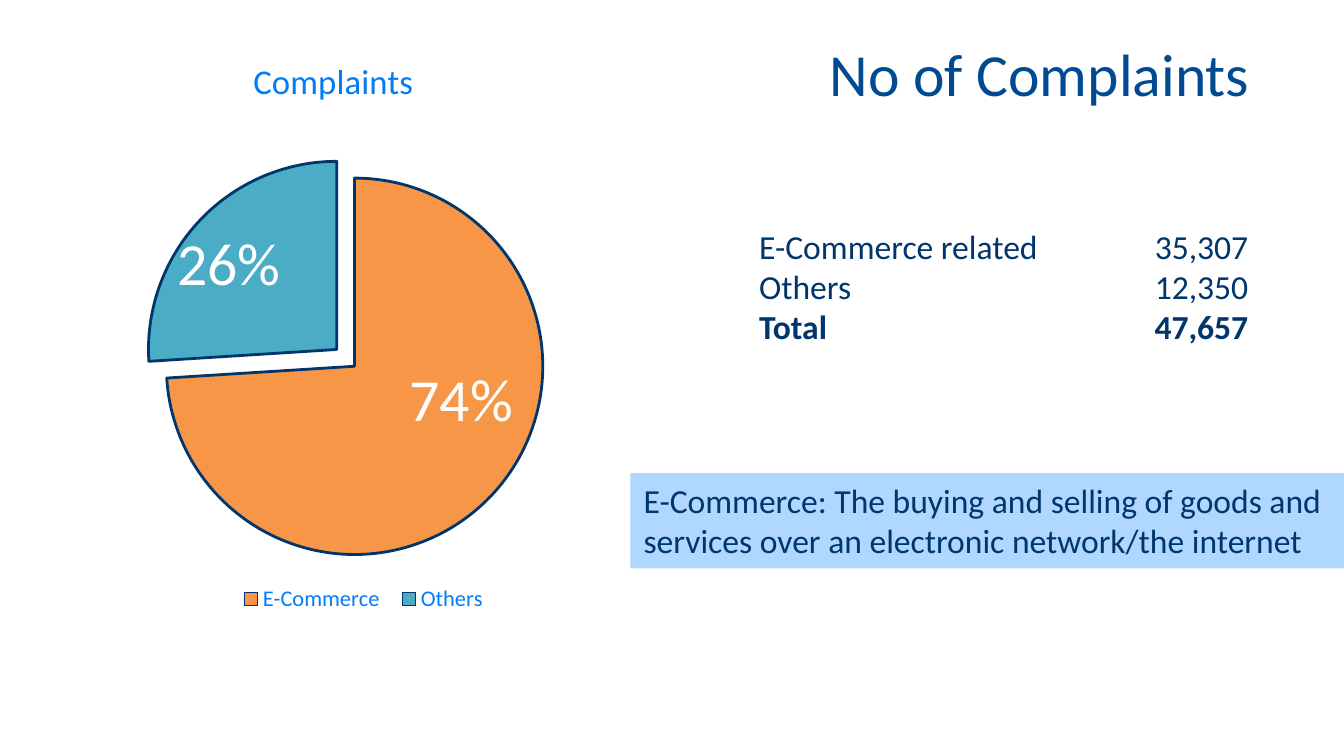
from typing import NamedTuple

from lxml.etree import _Element
from pptx import Presentation
from pptx.chart.chart import Chart
from pptx.chart.data import CategoryChartData
from pptx.dml.color import RGBColor
from pptx.enum.chart import XL_CHART_TYPE, XL_LEGEND_POSITION
from pptx.enum.shapes import MSO_SHAPE
from pptx.enum.text import MSO_ANCHOR, PP_ALIGN
from pptx.oxml import parse_xml
from pptx.oxml.ns import nsdecls, qn
from pptx.shapes.base import BaseShape
from pptx.slide import Slide
from pptx.text.text import Font, TextFrame, _Paragraph
from pptx.util import Inches, Length, Pt

FONT = "Calibri"
NAVY = RGBColor(0x00, 0x36, 0x6C)
TITLE_BLUE = RGBColor(0x00, 0x4A, 0x92)
BRIGHT_BLUE = RGBColor(0x00, 0x7C, 0xF9)
PALE_BLUE = RGBColor(0xAF, 0xD7, 0xFF)
WHITE = RGBColor(0xFF, 0xFF, 0xFF)
ORANGE = RGBColor(0xF7, 0x96, 0x46)
TEAL = RGBColor(0x4B, 0xAC, 0xC6)

CELL = Inches(0.1)  # side of one grid cell
COLUMNS, ROWS = 100, 56.25


class Area(NamedTuple):
    """A rectangle in grid columns and rows."""
    column: float
    row: float
    columns: float
    rows: float

    def lengths(self) -> list[Length]:
        return [Length(round(CELL * cells)) for cells in self]


class Slice(NamedTuple):
    name: str
    percent: int
    color: RGBColor
    explosion: int
    label: Area


class Count(NamedTuple):
    name: str
    complaints: str
    bold: bool = False


SLICES = [
    Slice("E-Commerce", 74, ORANGE, 0, Area(29.5, 26.4, 12.6, 6.4)),
    Slice("Others", 26, TEAL, 13, Area(12.2, 16.3, 12.6, 6.4)),
]
COUNTS = [
    Count("E-Commerce related", "35,307"),
    Count("Others", "12,350"),
    Count("Total", "47,657", bold=True),
]
DEFINITION = ("E-Commerce: The buying and selling of goods and services "
              "over an electronic network/the internet")


def style_font(font: Font, size: float, color: RGBColor, bold: bool = False) -> None:
    font.name = FONT
    font.size = Pt(size)
    font.bold = bold
    font.color.rgb = color


def add_span(para: _Paragraph, text: str, size: float, color: RGBColor,
             bold: bool = False) -> None:
    span = para.add_run()
    span.text = text
    style_font(span.font, size, color, bold)


def place(shape: BaseShape, area: Area) -> None:
    shape.left, shape.top, shape.width, shape.height = area.lengths()


def add_box(page: Slide, area: Area) -> TextFrame:
    frame = page.shapes.add_textbox(*area.lengths()).text_frame
    frame.word_wrap = True
    return frame


def set_layout(parent: _Element, index: int, **shares: float) -> None:
    """Place a chart part by shares of the chart's size."""
    for old in parent.findall(qn("c:layout")):
        parent.remove(old)
    modes = "".join(f'<c:{axis}Mode val="edge"/>' for axis in "xy")
    values = "".join(f'<c:{name} val="{share}"/>' for name, share in shares.items())
    target = '<c:layoutTarget val="inner"/>' if index == 0 else ""
    parent.insert(index, parse_xml(
        f'<c:layout {nsdecls("c")}><c:manualLayout>{target}{modes}{values}'
        "</c:manualLayout></c:layout>"))


def format_slices(chart: Chart) -> None:
    series = chart.plots[0].series[0]
    for index, piece in enumerate(SLICES):
        look = series.points[index].format
        look.fill.solid()
        look.fill.fore_color.rgb = piece.color
        look.line.color.rgb = NAVY
        look.line.width = Pt(1.5)
    for point, piece in zip(series._element.findall(qn("c:dPt")), SLICES):
        point.find(qn("c:spPr")).addprevious(parse_xml(
            f'<c:explosion {nsdecls("c")} val="{piece.explosion}"/>'))


def add_pie(page: Slide, area: Area) -> None:
    data = CategoryChartData()
    data.categories = [piece.name for piece in SLICES]
    data.add_series("Complaints", [piece.percent for piece in SLICES])
    chart = page.shapes.add_chart(XL_CHART_TYPE.PIE, *area.lengths(), data).chart
    style_font(chart.font, 10, NAVY)
    chart.plots[0].vary_by_categories = True
    format_slices(chart)

    heading = chart.chart_title
    add_span(heading.text_frame.paragraphs[0], "Complaints", 18.6, BRIGHT_BLUE)
    heading.include_in_layout = False
    chart.has_legend = True
    legend = chart.legend
    legend.position = XL_LEGEND_POSITION.BOTTOM
    legend.include_in_layout = False
    style_font(legend.font, 12, BRIGHT_BLUE)

    set_layout(heading._element, 1, x=0.4, y=0.03)
    set_layout(legend._element, 1, x=0.38, y=0.92, w=0.3, h=0.06)
    plot_area = chart._chartSpace.find(f".//{qn('c:plotArea')}")
    set_layout(plot_area, 0, x=0.31, y=0.24, w=0.42, h=0.64)


def add_title(page: Slide, area: Area) -> None:
    title = page.shapes.title
    place(title, area)
    frame = title.text_frame
    frame.margin_right = 2 * CELL
    frame.vertical_anchor = MSO_ANCHOR.MIDDLE
    para = frame.paragraphs[0]
    para.alignment = PP_ALIGN.RIGHT
    add_span(para, "No of Complaints", 32, TITLE_BLUE)


def add_counts(page: Slide, area: Area) -> None:
    frame = add_box(page, area)
    tab = round(CELL * (area.columns - 3.1))
    for index, count in enumerate(COUNTS):
        para = frame.add_paragraph() if index else frame.paragraphs[0]
        para._p.get_or_add_pPr().append(parse_xml(
            f'<a:tabLst {nsdecls("a")}><a:tab pos="{tab}" algn="r"/></a:tabLst>'))
        add_span(para, f"{count.name}\t{count.complaints}", 18, NAVY, count.bold)


def add_definition(page: Slide, area: Area) -> None:
    band = page.shapes.add_shape(MSO_SHAPE.RECTANGLE, *area.lengths())
    band.shadow.inherit = False
    band.fill.solid()
    band.fill.fore_color.rgb = PALE_BLUE
    band.line.fill.background()
    frame = band.text_frame
    frame.word_wrap = True
    frame.vertical_anchor = MSO_ANCHOR.TOP
    para = frame.paragraphs[0]
    para.alignment = PP_ALIGN.LEFT
    add_span(para, DEFINITION, 18, NAVY)


def main() -> None:
    deck = Presentation()
    deck.slide_width, deck.slide_height = Area(0, 0, COLUMNS, ROWS).lengths()[2:]
    page = deck.slides.add_slide(deck.slide_layouts.get_by_name("Title Only"))
    add_title(page, Area(2, 2.3, 93, 6.2))
    add_pie(page, Area(-8.3, 2.4, 66.7, 44.4))
    add_counts(page, Area(55.5, 16.3, 39.5, 10.1))
    for piece in SLICES:
        para = add_box(page, piece.label).paragraphs[0]
        add_span(para, f"{piece.percent}%", 32, WHITE)
    add_definition(page, Area(46.9, 35.2, 53.1, 7.1))
    deck.save("out.pptx")


if __name__ == "__main__":
    main()
